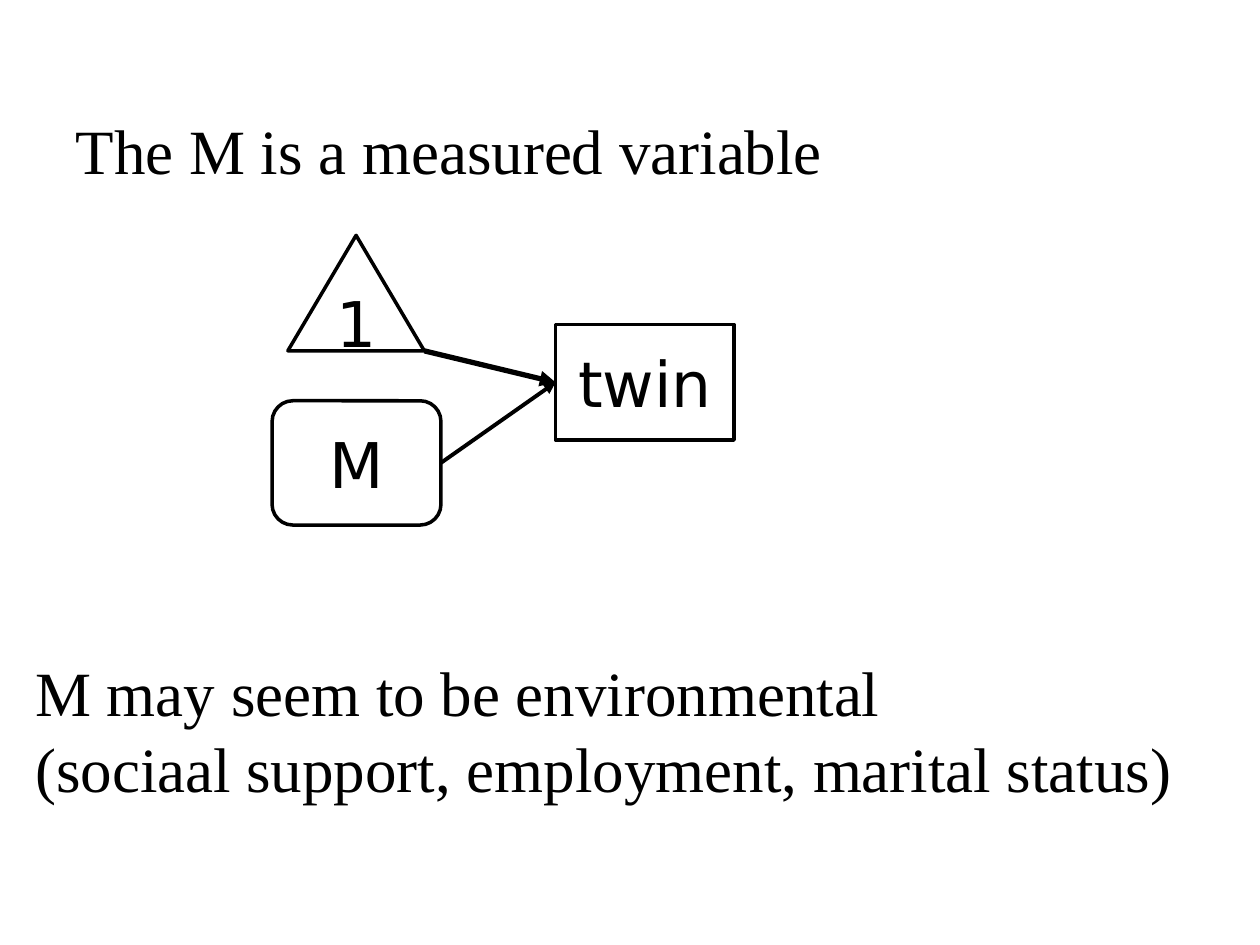
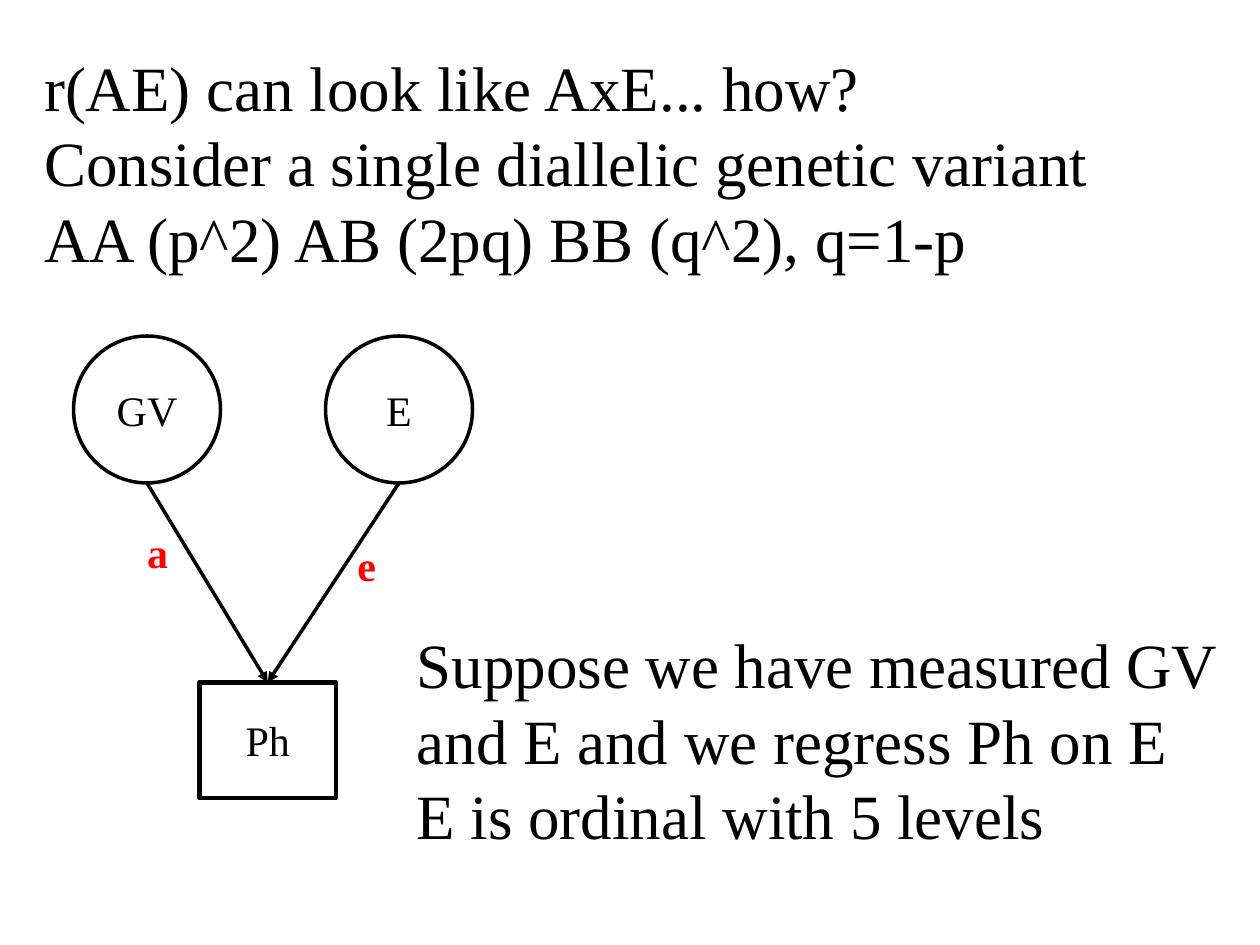
from lxml import etree
from pptx import Presentation
from pptx.dml.color import RGBColor
from pptx.enum.shapes import MSO_CONNECTOR, MSO_SHAPE
from pptx.enum.text import MSO_ANCHOR, MSO_AUTO_SIZE, PP_ALIGN
from pptx.oxml.ns import qn
from pptx.util import Pt

LINE = MSO_CONNECTOR.STRAIGHT
RECT, ROUND = MSO_SHAPE.RECTANGLE, MSO_SHAPE.ROUNDED_RECTANGLE
OVAL, CONE = MSO_SHAPE.OVAL, MSO_SHAPE.ISOSCELES_TRIANGLE
TOP, MIDDLE = MSO_ANCHOR.TOP, MSO_ANCHOR.MIDDLE
LEFT, CENTER = PP_ALIGN.LEFT, PP_ALIGN.CENTER
GROW = MSO_AUTO_SIZE.SHAPE_TO_FIT_TEXT
SERIF, SANS = "Times New Roman", "DejaVu Sans"
BLACK, WHITE, RED = "000000", "FFFFFF", "FF0000"
BIG, SMALL = 36, 24


def rgb(code):
    """Turn a hex string into a colour."""
    return RGBColor.from_string(code)


def write(shape, lines, size=BIG, face=SERIF, color=BLACK, bold=False,
          align=LEFT, anchor=TOP, wrap=False):
    """Fill a shape with one paragraph per line in a single style."""
    frame = shape.text_frame
    frame.text = "\n".join(lines)
    frame.word_wrap = wrap
    frame.vertical_anchor = anchor
    for para in frame.paragraphs:
        para.alignment = align
        font = para.font
        font.name, font.size, font.bold = face, Pt(size), bold
        font.color.rgb = rgb(color)


def head(slide, box, lines):
    """Move the title placeholder into the box and write the heading."""
    title = slide.shapes.title
    title.left, title.top, title.width, title.height = map(Pt, box)
    write(title, lines)
    title.text_frame.auto_size = GROW


def note(slide, box, lines, **style):
    """Add a text box that grows with its text."""
    text = slide.shapes.add_textbox(*map(Pt, box))
    write(text, lines, **style)
    text.text_frame.auto_size = GROW


def node(slide, kind, box, label, width=2, **style):
    """Add an outlined white shape with a centred label."""
    shape = slide.shapes.add_shape(kind, *map(Pt, box))
    shape.shadow.inherit = False
    shape.fill.solid()
    shape.fill.fore_color.rgb = rgb(WHITE)
    shape.line.color.rgb = rgb(BLACK)
    shape.line.width = Pt(width)
    write(shape, [label], align=CENTER, anchor=MIDDLE, **style)
    return shape


def arrow(slide, start, goal, side, width=2):
    """Draw an arrow from a point to the middle of a side of the goal."""
    link = slide.shapes.add_connector(LINE, *start, *start)
    link.end_connect(goal, side)
    link.line.color.rgb = rgb(BLACK)
    link.line.width = Pt(width)
    tail = etree.SubElement(link.line._get_or_add_ln(), qn("a:tailEnd"))
    tail.set("type", "triangle")
    etree.SubElement(link._element.spPr, qn("a:effectLst"))
    return link


def model(slide, x, y):
    """Draw the constant and the moderator pointing at the twin."""
    style = dict(face=SANS, wrap=True)
    twin = node(slide, RECT, (x + 162, y + 51, 102, 66), "twin", **style)
    one = node(slide, CONE, (x + 9, y, 78, 66), "1", **style)
    mod = node(slide, ROUND, (x, y + 94.5, 96.5, 71), "M", **style)
    corner = one.left + one.width, one.top + one.height
    arrow(slide, corner, twin, 1, 3)
    link = arrow(slide, corner, twin, 1, 2.25)
    link.begin_connect(mod, 3)


def paths(slide, x, y):
    """Draw the variant and the environment pointing at the phenotype."""
    goal = node(slide, RECT, (x + 72, y + 198, 78, 66), "Ph", 2.5, size=SMALL)
    for i, name in enumerate(("GV", "E")):
        ball = node(slide, OVAL, (x + 144 * i, y, 84, 84), name, size=SMALL)
        foot = ball.left + ball.width // 2, ball.top + ball.height
        arrow(slide, foot, goal, 0)
    style = dict(size=SMALL, color=RED, bold=True, align=CENTER, anchor=MIDDLE)
    note(slide, (x + 155, y + 112.5, 25, 36), ["e"], **style)
    note(slide, (x + 7, y + 105, 82, 36), ["a"], wrap=True, **style)


def measured(slide):
    """Build the slide on the measured moderator."""
    head(slide, (36, 60, 461, 51), ["The M is a measured variable"])
    model(slide, 155.5, 134.5)
    note(slide, (13, 370, 671, 94),
         ["M may seem to be environmental",
          "(sociaal support, employment, marital status)"])


def variant(slide):
    """Build the slide on the single genetic variant."""
    head(slide, (18, 24, 617, 138),
         ["r(AE) can look like AxE... how?",
          "Consider a single diallelic genetic variant",
          "AA (p^2) AB (2pq) BB (q^2), q=1-p"])
    paths(slide, 42, 192)
    note(slide, (231, 354, 474, 138),
         ["Suppose we have measured GV and E and we regress Ph on E",
          "E is ordinal with 5 levels"], wrap=True)


def main():
    """Build both slides and save the deck."""
    deck = Presentation()
    deck.slide_width, deck.slide_height = Pt(720), Pt(540)
    for build in (measured, variant):
        build(deck.slides.add_slide(deck.slide_layouts[5]))
    deck.save("out.pptx")


if __name__ == "__main__":
    main()
